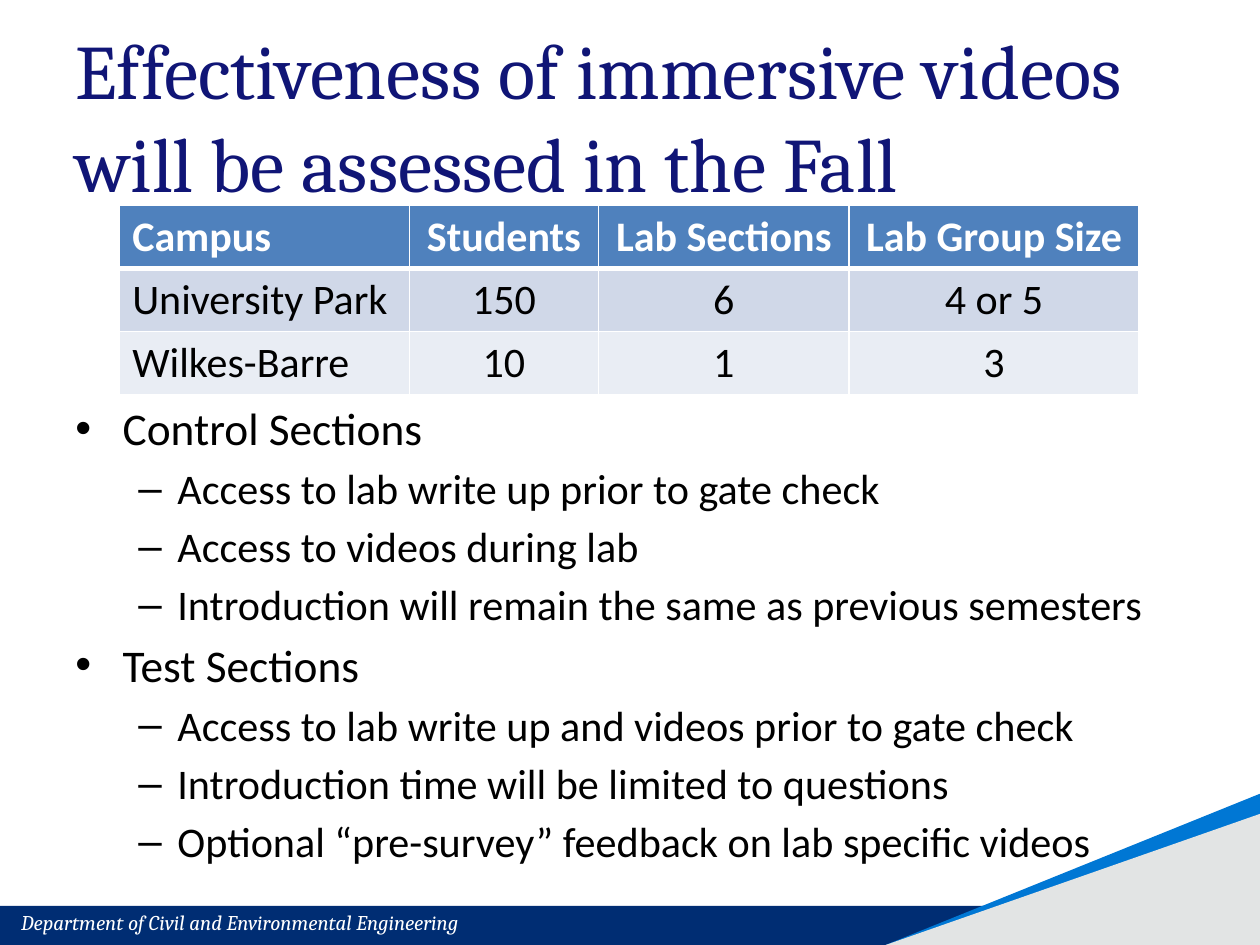
"""Build a slide on how immersive lab videos will be assessed."""
from dataclasses import dataclass

from lxml import etree
from pptx import Presentation
from pptx.dml.color import RGBColor
from pptx.enum.shapes import MSO_SHAPE
from pptx.enum.text import MSO_ANCHOR, PP_ALIGN
from pptx.oxml.ns import qn
from pptx.shapes.autoshape import Shape
from pptx.slide import Slide
from pptx.table import _Cell
from pptx.text.text import _Paragraph
from pptx.util import Inches, Pt

RECTANGLE, TRIANGLE = MSO_SHAPE.RECTANGLE, MSO_SHAPE.RIGHT_TRIANGLE
TOP, MIDDLE, BOTTOM = MSO_ANCHOR.TOP, MSO_ANCHOR.MIDDLE, MSO_ANCHOR.BOTTOM
LEFT, CENTER = PP_ALIGN.LEFT, PP_ALIGN.CENTER
COLUMNS, ROWS = 100, 75
UNIT = Inches(0.1)


@dataclass(frozen=True)
class Theme:
    heading_font: str = "Cambria"
    body_font: str = "Calibri"
    white: str = "FFFFFF"
    black: str = "000000"
    title: str = "101576"
    navy: str = "002D73"
    blue: str = "0077D4"
    gray: str = "E2E4E4"
    header: str = "4F81BD"
    bands: tuple[str, ...] = ("D0D8E8", "E9EDF4")
    title_size: float = 44
    footer_size: float = 12
    table_size: float = 24
    bullet_space: float = 4.3
    thin_line: float = 1
    thick_line: float = 3


@dataclass(frozen=True)
class Area:
    left: float
    top: float
    width: float
    height: float

    def lengths(self) -> tuple[int, ...]:
        return tuple(round(value * UNIT) for value in
                     (self.left, self.top, self.width, self.height))


@dataclass(frozen=True)
class Style:
    font: str
    size: float
    color: str
    bold: bool = False
    italic: bool = False


@dataclass(frozen=True)
class Level:
    mark: str
    margin: float
    hanging: float
    size: float


@dataclass(frozen=True)
class Decoration:
    shape: MSO_SHAPE
    area: Area
    color: str
    flipped: bool = False


@dataclass(frozen=True)
class Section:
    heading: str
    points: tuple[str, ...]


THEME = Theme()
HEADING = Level("•", 3.75, 3.75, 25.9)
POINT = Level("–", 8.1, 3.1, 24.1)
DECORATIONS = (
    Decoration(RECTANGLE, Area(0, 71.9, 80, 3.1), THEME.navy),
    Decoration(TRIANGLE, Area(70.3, 63, 29.7, 12), THEME.blue, True),
    Decoration(TRIANGLE, Area(70.3, 64.6, 29.7, 10.4), THEME.gray, True),
)
SECTIONS = (
    Section("Control Sections", (
        "Access to lab write up prior to gate check",
        "Access to videos during lab",
        "Introduction will remain the same as previous semesters")),
    Section("Test Sections", (
        "Access to lab write up and videos prior to gate check",
        "Introduction time will be limited to questions",
        "Optional “pre-survey” feedback on lab specific videos")),
)
CAMPUS_WIDTHS = (23, 15, 19.9, 23)
CAMPUS_ROWS = (
    ("Campus", "Students", "Lab Sections", "Lab Group Size"),
    ("University Park", "150", "6", "4 or 5"),
    ("Wilkes-Barre", "10", "1", "3"),
)


def write(para: _Paragraph, text: str, style: Style) -> None:
    para.text = text
    for span in para.runs:
        span.font.name = style.font
        span.font.size = Pt(style.size)
        span.font.bold = style.bold
        span.font.italic = style.italic
        span.font.color.rgb = RGBColor.from_string(style.color)


def add_decoration(page: Slide, item: Decoration) -> None:
    shape = page.shapes.add_shape(item.shape, *item.area.lengths())
    shape.shadow.inherit = False
    shape.fill.solid()
    shape.fill.fore_color.rgb = RGBColor.from_string(item.color)
    shape.line.fill.background()
    if item.flipped:
        shape._element.spPr.find(qn("a:xfrm")).set("flipH", "1")


def add_box(page: Slide, area: Area, anchor: MSO_ANCHOR, wrap: bool = True) -> Shape:
    box = page.shapes.add_textbox(*area.lengths())
    box.text_frame.word_wrap = wrap
    box.text_frame.vertical_anchor = anchor
    return box


def set_bullet(para: _Paragraph, level: Level) -> None:
    properties = para._p.get_or_add_pPr()
    properties.set("marL", str(round(level.margin * UNIT)))
    properties.set("indent", str(round(-level.hanging * UNIT)))
    etree.SubElement(properties, qn("a:buFont"), typeface="Arial")
    etree.SubElement(properties, qn("a:buChar"), char=level.mark)


def add_sections(page: Slide, area: Area, sections: tuple[Section, ...]) -> None:
    frame = add_box(page, area, TOP).text_frame
    lines = [line for section in sections for line in
             ((section.heading, HEADING), *((point, POINT) for point in section.points))]
    for index, (text, level) in enumerate(lines):
        para = frame.add_paragraph() if index else frame.paragraphs[0]
        para.space_before = Pt(THEME.bullet_space if index else 0)
        set_bullet(para, level)
        write(para, text, Style(THEME.body_font, level.size, THEME.black))


def set_borders(cell: _Cell, row: int) -> None:
    widths = {"lnL": THEME.thin_line, "lnR": THEME.thin_line,
              "lnT": THEME.thick_line if row == 1 else THEME.thin_line,
              "lnB": THEME.thick_line if row == 0 else THEME.thin_line}
    properties = cell._tc.get_or_add_tcPr()
    for side, width in widths.items():
        line = etree.SubElement(properties, qn(f"a:{side}"), w=str(Pt(width)))
        fill = etree.SubElement(line, qn("a:solidFill"))
        etree.SubElement(fill, qn("a:srgbClr"), val=THEME.white)


def add_campus_table(page: Slide, area: Area) -> None:
    table = page.shapes.add_table(
        len(CAMPUS_ROWS), len(CAMPUS_WIDTHS), *area.lengths()).table
    for column, width in zip(table.columns, CAMPUS_WIDTHS):
        column.width = round(width * UNIT)
    for row, texts in enumerate(CAMPUS_ROWS):
        is_header = row == 0
        color = THEME.header if is_header else THEME.bands[row - 1]
        style = Style(THEME.body_font, THEME.table_size,
                      THEME.white if is_header else THEME.black, is_header)
        for column, text in enumerate(texts):
            cell = table.cell(row, column)
            set_borders(cell, row)
            cell.fill.solid()
            cell.fill.fore_color.rgb = RGBColor.from_string(color)
            para = cell.text_frame.paragraphs[0]
            write(para, text, style)
            para.alignment = CENTER if column else LEFT


def main() -> None:
    deck = Presentation()
    deck.slide_width, deck.slide_height = COLUMNS * UNIT, ROWS * UNIT
    page = deck.slides.add_slide(deck.slide_layouts[6])
    for item in DECORATIONS:
        add_decoration(page, item)
    footer = add_box(page, Area(0.7, 71.9, 69.6, 2.8), BOTTOM, wrap=False)
    write(footer.text_frame.paragraphs[0], "Department of Civil and Environmental Engineering",
          Style(THEME.heading_font, THEME.footer_size, THEME.white, italic=True))
    title = add_box(page, Area(5, 3.6, 90, 11.1), MIDDLE)
    write(title.text_frame.paragraphs[0],
          "Effectiveness of immersive videos will be assessed in the Fall",
          Style(THEME.heading_font, THEME.title_size, THEME.title))
    add_sections(page, Area(5, 31.3, 90, 40.1), SECTIONS)
    add_campus_table(page, Area(9.5, 16.3, sum(CAMPUS_WIDTHS), 15))
    deck.save("out.pptx")


if __name__ == "__main__":
    main()
